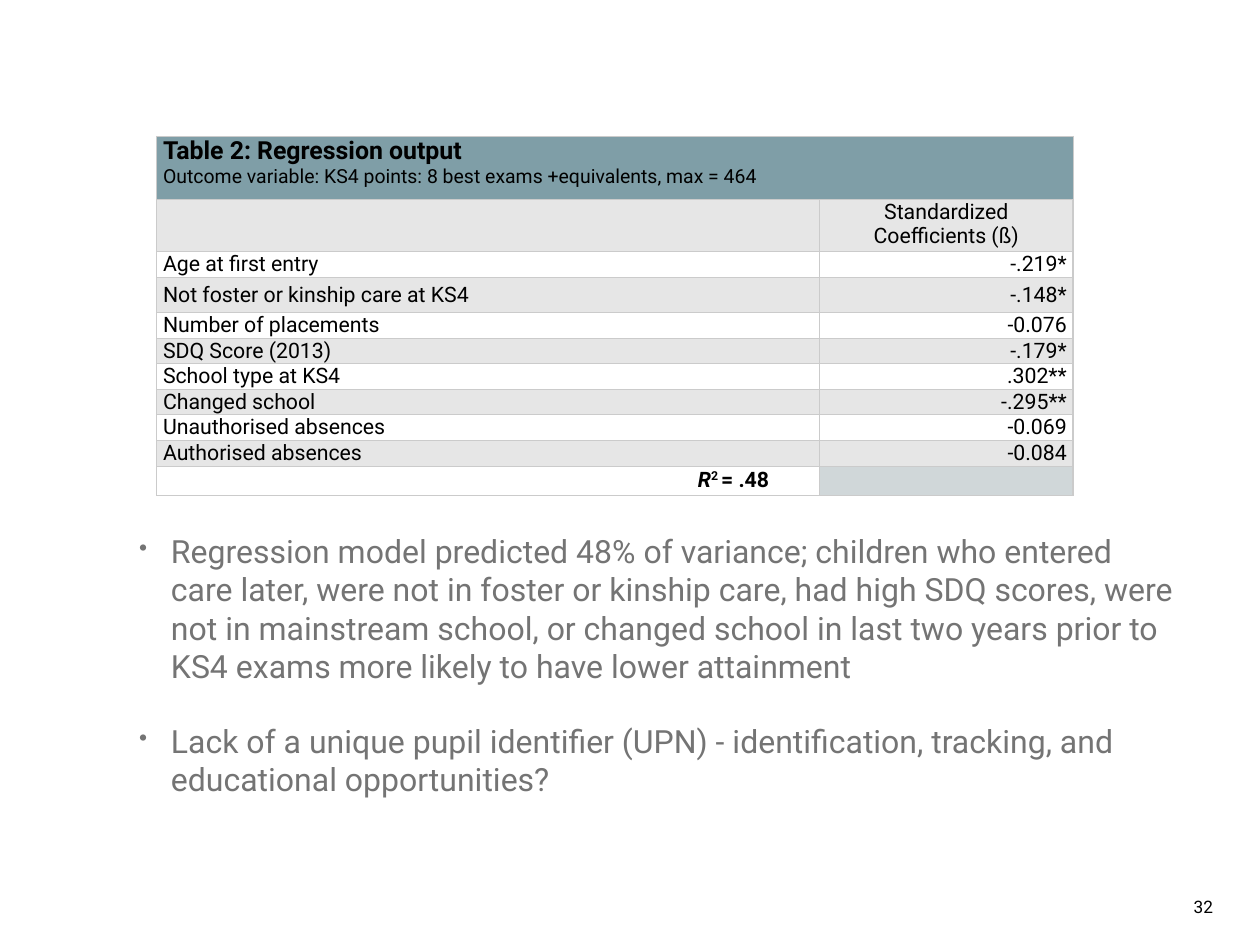
"""Build the regression output slide with its table and findings."""
from pptx import Presentation, util as u
from pptx.dml import color
from pptx.enum import text as t
from pptx.oxml import parse_xml, ns

FONT = "Roboto"
INK, GREY, LINE = "000000", "747474", "CBCBCB"
HEAD, BAND, PLAIN, FOOT = "7F9EA7", "E6E6E6", "FFFFFF", "D0D7D9"
LEFT, MID, RIGHT = t.PP_ALIGN.LEFT, t.PP_ALIGN.CENTER, t.PP_ALIGN.RIGHT
TOP, CORE = t.MSO_ANCHOR.TOP, t.MSO_ANCHOR.MIDDLE
SIZE = 17.3

RATES = [
    ("Age at first entry", "-.219*"),
    ("Not foster or kinship care at KS4", "-.148*"),
    ("Number of placements", "-0.076"),
    ("SDQ Score (2013)", "-.179*"),
    ("School type at KS4", ".302**"),
    ("Changed school", "-.295**"),
    ("Unauthorised absences", "-0.069"),
    ("Authorised absences", "-0.084"),
]
NOTES = [
    "Regression model predicted 48% of variance; children who entered care "
    "later, were not in foster or kinship care, had high SDQ scores, were not "
    "in mainstream school, or changed school in last two years prior to KS4 "
    "exams more likely to have lower attainment",
    "Lack of a unique pupil identifier (UPN) - identification, tracking, "
    "and educational opportunities?",
]


def rgb(code):
    """Turn a hex string into a colour."""
    return color.RGBColor.from_string(code)


def put(item, form):
    """Set attributes from a dict of format values."""
    for name, value in form.items():
        setattr(item, name, value)


def add_run(para, words, size, ink=INK, **form):
    """Add a run of text to a paragraph."""
    run = para.add_run()
    run.text = words
    put(run.font, {"name": FONT, "size": u.Pt(size), **form})
    run.font.color.rgb = rgb(ink)
    return run


def add_box(slide, left, top, width, height):
    """Add a wrapping text box and return its frame."""
    box = slide.shapes.add_textbox(*map(u.Inches, (left, top, width, height)))
    pad = u.Inches(0.06)
    put(box.text_frame, {"word_wrap": True, "margin_left": pad, "margin_top": pad,
                         "margin_right": pad, "margin_bottom": pad})
    return box.text_frame


def add_notes(slide):
    """Add the bulleted findings."""
    frame = add_box(slide, 1.15, 5.94, 12.26, 3.6)
    for i, words in enumerate(NOTES):
        para = frame.add_paragraph() if i else frame.paragraphs[0]
        add_run(para, words, 26, GREY)
        para.space_after = u.Pt(0 if i else 30)
        props = para._p.get_or_add_pPr()
        props.set("marL", str(u.Inches(0.72)))
        props.set("indent", str(u.Inches(-0.36)))
        for tag in ('buClr><a:srgbClr val="%s"/></a:buClr' % GREY,
                    'buSzPct val="75000"/', 'buChar char="•"/'):
            props.append(parse_xml("<a:%s>" % tag.replace(
                " " if " " in tag and not tag.startswith("buClr") else ">",
                " %s%s" % (ns.nsdecls("a"), " " if not tag.startswith("buClr") else ">"), 1)))


def edge(cell, widths):
    """Draw the four borders of a cell."""
    props = cell._tc.get_or_add_tcPr()
    for i, (side, width) in enumerate(zip("LRTB", widths)):
        props.insert(i, parse_xml(
            '<a:ln%s %s w="%d"><a:solidFill><a:srgbClr val="%s"/></a:solidFill></a:ln%s>'
            % (side, ns.nsdecls("a"), u.Pt(width), LINE, side)))


def rule(row):
    """Give the width of the line above a row."""
    return 1 if row == 0 or 3 <= row <= 9 else 0.5


def write(cell, words, align=LEFT):
    """Write plain text into a cell."""
    para = cell.text_frame.paragraphs[0]
    para.alignment = align
    if words:
        add_run(para, words, SIZE)


def add_grid(slide):
    """Add the regression table."""
    highs = [0.71, 0.59, 0.28, 0.4] + [0.28] * 6 + [0.33]
    grid = slide.shapes.add_table(len(highs), 2, *map(
        u.Inches, (1.77, 1.54, 10.34, sum(highs)))).table
    put(grid, {"first_row": False, "horz_banding": False})
    for col, width in zip(grid.columns, (7.48, 2.86)):
        col.width = u.Inches(width)
    for r, high in enumerate(highs):
        grid.rows[r].height = u.Inches(high)
        for c in range(2):
            cell = grid.cell(r, c)
            put(cell, {"margin_left": u.Inches(0.07), "margin_right": u.Inches(0.07),
                       "margin_top": 0, "margin_bottom": 0,
                       "vertical_anchor": CORE if r > 1 else TOP})
            cell.fill.solid()
            cell.fill.fore_color.rgb = rgb(HEAD if r == 0 else BAND if r % 2 else PLAIN)
            edge(cell, (0.5 if c else 1, 1 if c else 0.5, rule(r), rule(r + 1)))
    head = grid.cell(0, 0)
    head.merge(grid.cell(0, 1))
    add_run(head.text_frame.paragraphs[0], "Table 2: Regression output", 20.2, bold=True)
    add_run(head.text_frame.add_paragraph(),
            "Outcome variable: KS4 points: 8 best exams +equivalents, max = 464", 15.8)
    write(grid.cell(1, 1), "Standardized Coefficients (ß)", MID)
    for r, (name, value) in enumerate(RATES, 2):
        write(grid.cell(r, 0), name)
        write(grid.cell(r, 1), value, RIGHT)
    add_fit(grid.cell(10, 0))
    grid.cell(10, 1).fill.fore_color.rgb = rgb(FOOT)


def add_fit(cell):
    """Write the share of variance explained."""
    cell.margin_right = u.Inches(0.57)
    para = cell.text_frame.paragraphs[0]
    para.alignment = RIGHT
    add_run(para, "R", SIZE, bold=True, italic=True)
    power = add_run(para, "2 ", SIZE, bold=True)
    power.font._element.set("baseline", "32000")
    add_run(para, "= .48", SIZE, bold=True)


def add_page(slide):
    """Add the slide number."""
    para = add_box(slide, 13.25, 10.06, 0.5, 0.33).paragraphs[0]
    para.alignment = RIGHT
    add_run(para, "32", 14)


def main():
    """Build and save the slide."""
    deck = Presentation()
    put(deck, {"slide_width": u.Inches(14.22), "slide_height": u.Inches(10.67)})
    slide = deck.slides.add_slide(deck.slide_layouts[6])
    add_notes(slide)
    add_grid(slide)
    add_page(slide)
    deck.save("out.pptx")


if __name__ == "__main__":
    main()
